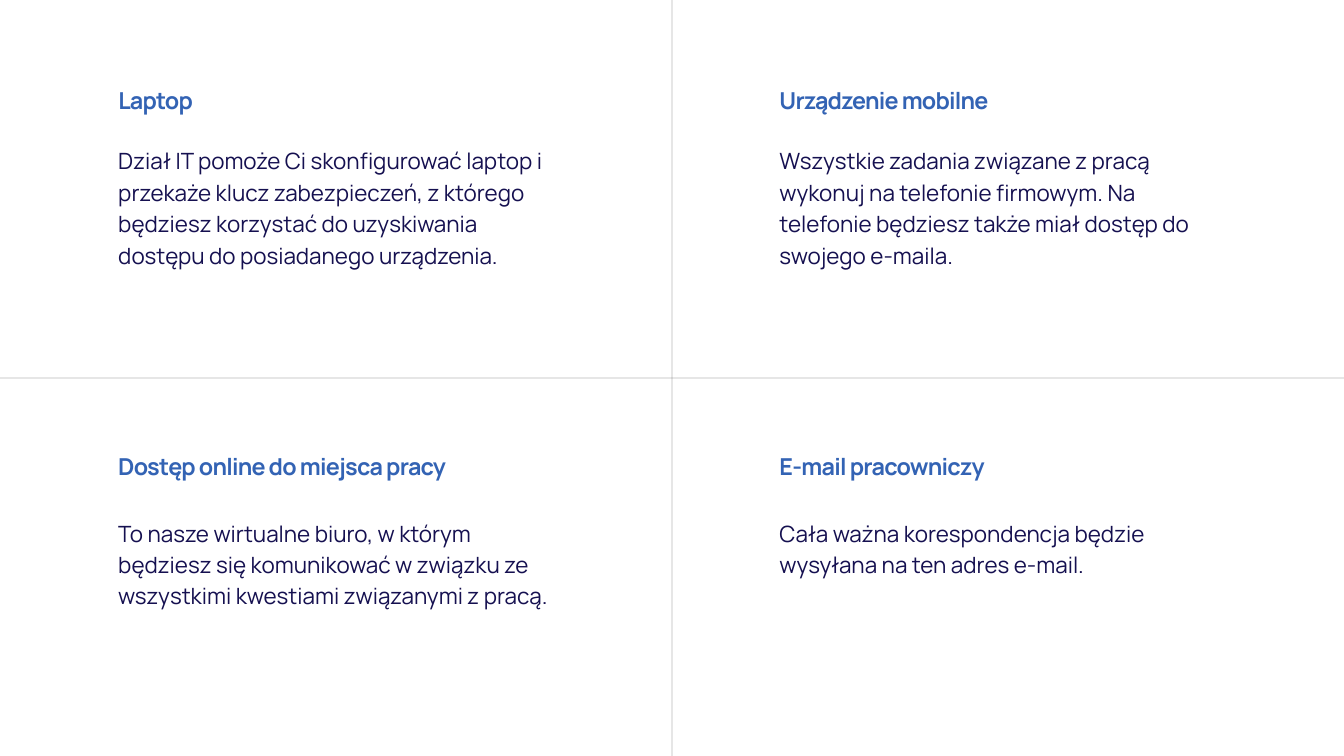
"""Build a slide of four work tools, one in each quarter."""
import dataclasses

import lxml.etree
import pptx
import pptx.dml.color
import pptx.enum.shapes
import pptx.enum.text
import pptx.oxml.ns
import pptx.util

BLUE = pptx.dml.color.RGBColor(0x33, 0x63, 0xB4)
NAVY = pptx.dml.color.RGBColor(0x15, 0x10, 0x50)
GREY = pptx.dml.color.RGBColor(0x19, 0x19, 0x19)
WIDE, HIGH = 20, 11.25
LEFTS = (1.76, 11.6)
HEADS = (1.24, 6.7)
BODIES = (2.13, 7.67)
TEXT_WIDE, LINE = 6.64, 0.46
FRAME = {
    "margin_left": 0, "margin_top": 0, "margin_right": 0, "margin_bottom": 0,
    "word_wrap": True,
    "vertical_anchor": pptx.enum.text.MSO_ANCHOR.TOP,
    "auto_size": pptx.enum.text.MSO_AUTO_SIZE.SHAPE_TO_FIT_TEXT,
}


@dataclasses.dataclass(frozen=True)
class Style:
    color: pptx.dml.color.RGBColor
    pitch: float
    space: int
    font: dict


@dataclasses.dataclass(frozen=True)
class Tool:
    col: int
    row: int
    head: str
    body: str
    lines: int


HEAD = Style(BLUE, 32.5, -80, {"name": "Manrope", "size": pptx.util.Pt(25), "bold": True})
BODY = Style(NAVY, 33.6, 0, {"name": "Manrope", "size": pptx.util.Pt(24), "bold": False})
TOOLS = (
    Tool(0, 0, "Laptop",
         "Dział IT pomoże Ci skonfigurować laptop i przekaże klucz zabezpieczeń, "
         "z którego będziesz korzystać do uzyskiwania dostępu do posiadanego urządzenia.", 5),
    Tool(0, 1, "Dostęp online do miejsca pracy",
         "To nasze wirtualne biuro, w którym będziesz się komunikować w związku ze "
         "wszystkimi kwestiami związanymi z pracą.", 4),
    Tool(1, 0, "Urządzenie mobilne",
         "Wszystkie zadania związane z pracą wykonuj na telefonie firmowym. "
         "Na telefonie będziesz także miał dostęp do swojego e-maila.", 4),
    Tool(1, 1, "E-mail pracowniczy",
         "Cała ważna korespondencja będzie wysyłana na ten adres e-mail.", 2),
)


def apply(item: object, values: dict) -> None:
    for name, value in values.items():
        setattr(item, name, value)


def draw_line(slide: pptx.slide.Slide, start: tuple, end: tuple) -> None:
    ends = [pptx.util.Inches(share * side)
            for point in (start, end) for share, side in zip(point, (WIDE, HIGH))]
    line = slide.shapes.add_connector(pptx.enum.shapes.MSO_CONNECTOR.STRAIGHT, *ends)
    line.line.width = pptx.util.Pt(0.75)
    line.line.color.rgb = GREY
    props = line._element.spPr
    tint = next(props.iter(pptx.oxml.ns.qn("a:srgbClr")))
    lxml.etree.SubElement(tint, pptx.oxml.ns.qn("a:alpha"), val="30000")
    lxml.etree.SubElement(props, pptx.oxml.ns.qn("a:effectLst"))


def write(box: pptx.shapes.base.BaseShape, text: str, style: Style,
          left: float, top: float, lines: int) -> None:
    sizes = {"left": left, "top": top, "width": TEXT_WIDE, "height": lines * LINE}
    apply(box, {name: pptx.util.Inches(size) for name, size in sizes.items()})
    apply(box.text_frame, FRAME)
    para = box.text_frame.paragraphs[0]
    apply(para, {"alignment": pptx.enum.text.PP_ALIGN.LEFT,
                 "line_spacing": pptx.util.Pt(style.pitch),
                 "space_before": pptx.util.Pt(0)})
    run = para.add_run()
    run.text = text
    apply(run.font, style.font)
    run.font.color.rgb = style.color
    if style.space:
        run._r.get_or_add_rPr().set("spc", str(style.space))


def draw_tool(slide: pptx.slide.Slide, tool: Tool) -> None:
    left = LEFTS[tool.col]
    first = tool is TOOLS[0]
    head = slide.shapes.title if first else slide.shapes.add_textbox(0, 0, 0, 0)
    write(head, tool.head, HEAD, left, HEADS[tool.row], 1)
    body = slide.shapes.add_textbox(0, 0, 0, 0)
    write(body, tool.body, BODY, left, BODIES[tool.row], tool.lines)


def main() -> None:
    deck = pptx.Presentation()
    apply(deck, {"slide_width": pptx.util.Inches(WIDE),
                 "slide_height": pptx.util.Inches(HIGH)})
    slide = deck.slides.add_slide(deck.slide_layouts.get_by_name("Title Only"))
    draw_line(slide, (0.5, 1), (0.5, 0))
    draw_line(slide, (0, 0.5), (1, 0.5))
    for tool in TOOLS:
        draw_tool(slide, tool)
    deck.save("out.pptx")


if __name__ == "__main__":
    main()
